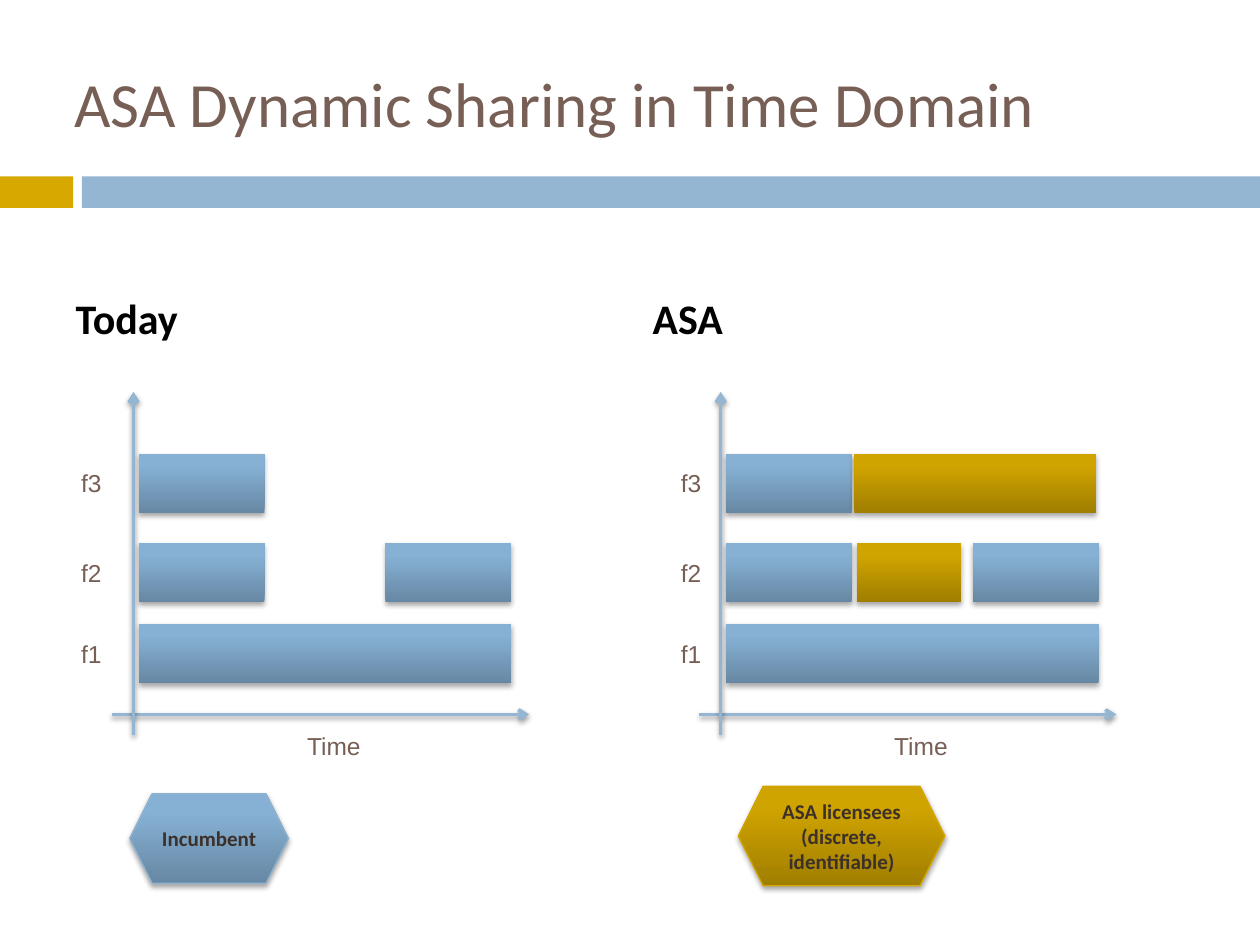
from lxml import etree
from copy import deepcopy
from pptx import Presentation
from pptx.dml.color import RGBColor
from pptx.enum.shapes import MSO_CONNECTOR, MSO_SHAPE
from pptx.enum.text import MSO_ANCHOR, MSO_AUTO_SIZE, PP_ALIGN
from pptx.oxml.ns import qn
from pptx.util import Inches, Pt

RECT, HEXAGON = MSO_SHAPE.RECTANGLE, MSO_SHAPE.HEXAGON
STRAIGHT = MSO_CONNECTOR.STRAIGHT
TOP, MIDDLE, BOTTOM = MSO_ANCHOR.TOP, MSO_ANCHOR.MIDDLE, MSO_ANCHOR.BOTTOM
LEFT, CENTER = PP_ALIGN.LEFT, PP_ALIGN.CENTER
NO_AUTOFIT = MSO_AUTO_SIZE.NONE

THEME = {
    "heading_font": "Calibri", "label_font": "Arial",
    "title_size": 36, "heading_size": 24, "label_size": 14, "legend_size": 12,
    "brown": "775F55", "dark": "3C302A", "black": "000000",
    "blue": "94B6D2", "gold": "D7A900",
    # gradient runs from the bottom edge to the top edge
    "incumbent": [(0, "6788A4"), (0.8, "86B1D4"), (1, "86B2D7")],
    "licensee": [(0, "A07E00"), (0.8, "D0A400"), (1, "D1A500")],
    "incumbent_edge": "8FB2CF", "licensee_edge": "D2A500",
}

TITLE = "ASA Dynamic Sharing in Time Domain"
BANDS = [("gold", 0, 0.58), ("blue", 0.65, 9.35)]
ROW_TOPS = {"f1": 4.95, "f2": 4.31, "f3": 3.6}
ROW_HEIGHT = 0.47
TIME_LABEL = "Time"

# Each slot: band, user, start and length along the time axis
TODAY_SLOTS = [
    ("f1", "incumbent", 0, 2.96),
    ("f2", "incumbent", 0, 1),
    ("f2", "incumbent", 1.96, 1),
    ("f3", "incumbent", 0, 1),
]
ASA_SLOTS = TODAY_SLOTS + [
    ("f2", "licensee", 1.04, 0.83),
    ("f3", "licensee", 1.02, 1.92),
]
# Each panel: heading, heading placeholder, heading left, label left, axis x, slots
PANELS = [
    ("Today", 1, 0.5, 0.5, 1.06, TODAY_SLOTS),
    ("ASA", 3, 5.08, 5.26, 5.72, ASA_SLOTS),
]
LEGEND = [
    ("Incumbent", "incumbent", (1.03, 6.3, 1.26, 0.71)),
    ("ASA licensees (discrete, identifiable)", "licensee", (5.86, 6.24, 1.64, 0.79)),
]


def rgb(name):
    return RGBColor.from_string(THEME.get(name, name))


def write(shape, text, size, color, font="heading_font", bold=False,
          align=LEFT, anchor=MIDDLE, space_before=0, inset=None):
    frame = shape.text_frame
    frame.word_wrap = True
    frame.auto_size = NO_AUTOFIT
    frame.vertical_anchor = anchor
    if inset is not None:
        frame.margin_left = frame.margin_right = Inches(inset)
        frame.margin_top = frame.margin_bottom = Inches(inset)
    paragraph = frame.paragraphs[0]
    paragraph.alignment = align
    paragraph.space_before = Pt(space_before)
    run = paragraph.add_run()
    run.text = text
    run.font.name = THEME[font]
    run.font.size = Pt(THEME[size])
    run.font.bold = bold
    run.font.color.rgb = rgb(color)


def place(shape, *box):
    shape.left, shape.top, shape.width, shape.height = map(Inches, box)


def add_shadow(shape, opacity, distance):
    properties = shape._element.spPr
    effects = properties.find(qn("a:effectLst"))
    if effects is None:
        effects = etree.SubElement(properties, qn("a:effectLst"))
    shadow = etree.SubElement(effects, qn("a:outerShdw"), blurRad=str(Pt(3.1)),
                              dist=str(Pt(distance)), dir="5400000", rotWithShape="0")
    color = etree.SubElement(shadow, qn("a:srgbClr"), val=THEME["black"])
    etree.SubElement(color, qn("a:alpha"), val=str(opacity * 1000))


def add_block(slide, kind, box, user, edge=None):
    """Add a shaded, shadowed shape in the colours of a spectrum user."""
    block = slide.shapes.add_shape(kind, *map(Inches, box))
    block.fill.gradient()
    block.fill.gradient_angle = 90
    stop_list = block._element.spPr.find(qn("a:gradFill")).find(qn("a:gsLst"))
    stop_list.append(deepcopy(stop_list[-1]))
    for stop, (position, color) in zip(block.fill.gradient_stops, THEME[user]):
        stop.position = position
        stop.color.rgb = rgb(color)
    if edge:
        block.line.color.rgb = rgb(edge)
        block.line.width = Pt(0.75)
    else:
        block.line.fill.background()
    block.shadow.inherit = False
    add_shadow(block, 35, 1.8)
    return block


def add_axis(slide, *ends):
    axis = slide.shapes.add_connector(STRAIGHT, *map(Inches, ends))
    axis.line.color.rgb = rgb("blue")
    axis.line.width = Pt(2)
    etree.SubElement(axis.line._get_or_add_ln(), qn("a:tailEnd"), type="arrow")
    add_shadow(axis, 38, 1.6)


def add_label(slide, text, box, anchor=MIDDLE):
    label = slide.shapes.add_textbox(*map(Inches, box))
    write(label, text, "label_size", "brown", font="label_font",
          align=CENTER, anchor=anchor)


def add_panel(slide, heading, holder, heading_left, label_left, axis_x, slots):
    heading_box = slide.placeholders[holder]
    place(heading_box, heading_left, 2.07, 4.42, 0.7)
    write(heading_box, heading, "heading_size", "black", bold=True,
          anchor=BOTTOM, space_before=7)
    add_axis(slide, axis_x - 0.17, 5.67, axis_x + 3.14, 5.67)
    add_axis(slide, axis_x, 5.83, axis_x, 3.11)
    origin = axis_x + 0.04
    for band, user, start, length in slots:
        add_block(slide, RECT, (origin + start, ROW_TOPS[band], length, ROW_HEIGHT), user)
    add_label(slide, TIME_LABEL, (origin, 5.75, 3.1, 0.34), anchor=TOP)
    for band, top in ROW_TOPS.items():
        add_label(slide, band, (label_left, top, 0.45, ROW_HEIGHT))


def main():
    deck = Presentation()
    deck.slide_width, deck.slide_height = Inches(10), Inches(7.5)
    slide = deck.slides.add_slide(deck.slide_layouts[4])
    for unused in (2, 4):
        holder = slide.placeholders[unused]._element
        holder.getparent().remove(holder)

    for color, left, width in BANDS:
        band = slide.shapes.add_shape(RECT, *map(Inches, (left, 1.4, width, 0.25)))
        band.fill.solid()
        band.fill.fore_color.rgb = rgb(color)
        band.line.fill.background()
        band.shadow.inherit = False

    title = slide.shapes.title
    place(title, 0.49, 0.3, 8.68, 1.02)
    write(title, TITLE, "title_size", "brown")

    for panel in PANELS:
        add_panel(slide, *panel)
    for text, user, box in LEGEND:
        hexagon = add_block(slide, HEXAGON, box, user, edge=user + "_edge")
        write(hexagon, text, "legend_size", "dark", bold=True, align=CENTER, inset=0)

    deck.save("out.pptx")


if __name__ == "__main__":
    main()
